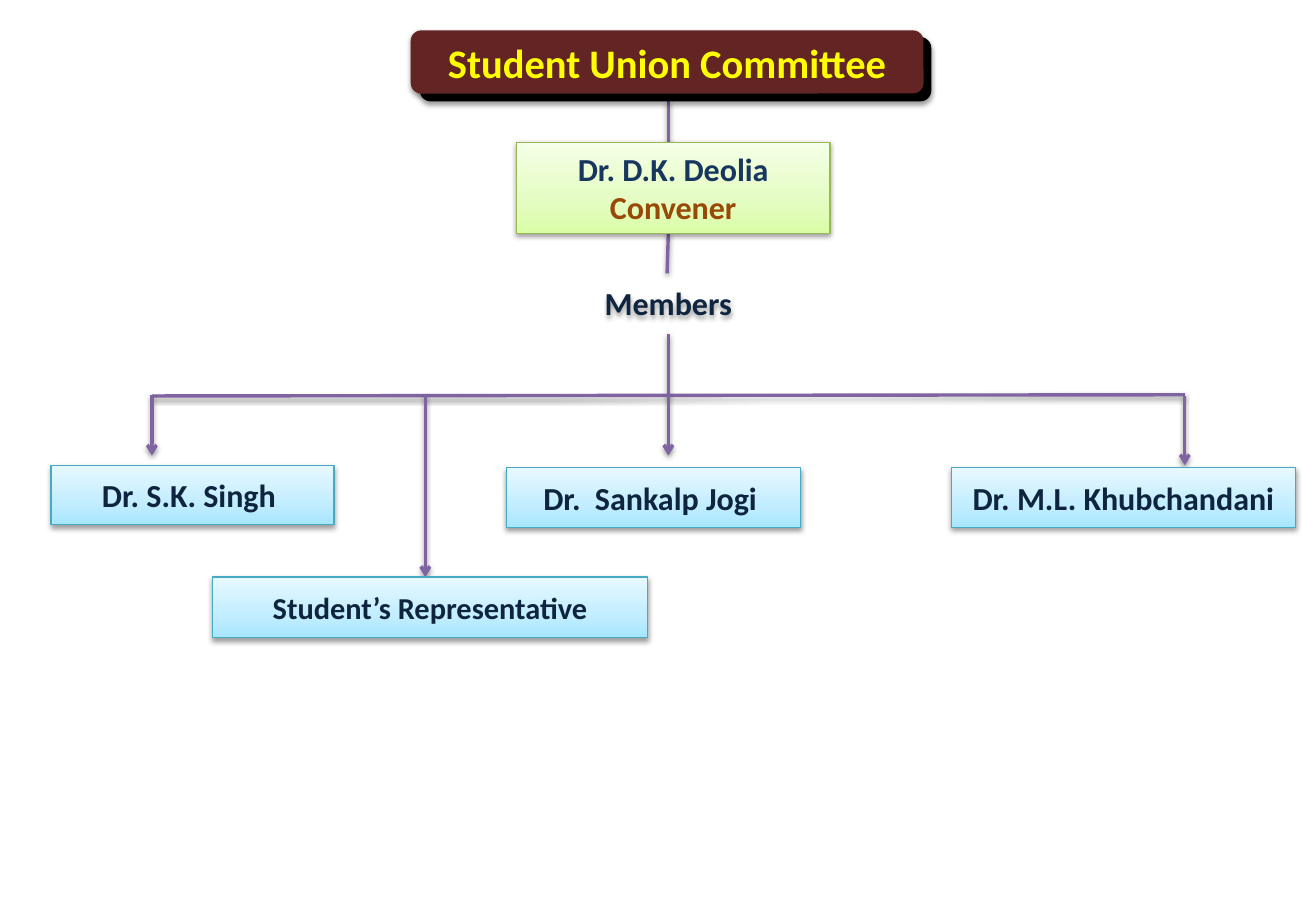
import copy

import lxml.etree
import pptx
import pptx.dml.color
import pptx.enum.shapes
import pptx.enum.text
import pptx.oxml.ns
import pptx.util

Inches, Pt, qn = pptx.util.Inches, pptx.util.Pt, pptx.oxml.ns.qn
SHAPE = pptx.enum.shapes.MSO_SHAPE
PURPLE, NAVY = "8064A2", "0F243E"
BLUE = (["A7E6FF", "C1EDFF", "E7F8FF"], "46AAC5")
GREEN = (["DAFDA7", "E4FCC2", "F5FFE7"], "98B955")
MAROON = (["632523"], None)
BLACK = (["000000"], "000000")
PLAIN = ([], None)


def color(value):
    return pptx.dml.color.RGBColor.from_string(value)


def add_shadow(item):
    effects = lxml.etree.SubElement(item._element.spPr, qn("a:effectLst"))
    shadow = lxml.etree.SubElement(effects, qn("a:outerShdw"), blurRad=str(Pt(3.1)),
                                   dist=str(Pt(1.6)), dir="5400000", rotWithShape="0")
    black = lxml.etree.SubElement(shadow, qn("a:srgbClr"), val="000000")
    lxml.etree.SubElement(black, qn("a:alpha"), val="38000")


deck = pptx.Presentation()
deck.slide_width, deck.slide_height = Inches(10.83), Inches(7.5)
page = deck.slides.add_slide(deck.slide_layouts[6])

# Connecting lines: start, end, arrowhead
links = [
    ((5.5, 0.83), (5.5, 1.17), False),
    ((5.5, 1.92), (5.49, 2.25), False),
    ((5.5, 2.75), (5.5, 3.25), False),
    ((1.25, 3.26), (9.75, 3.25), False),
    ((1.25, 3.25), (1.25, 3.75), True),
    ((3.5, 3.25), (3.5, 4.75), True),
    ((5.5, 3.25), (5.5, 3.75), True),
    ((9.75, 3.26), (9.75, 3.83), True),
]
for start, end, arrow in links:
    link = page.shapes.add_connector(pptx.enum.shapes.MSO_CONNECTOR.STRAIGHT,
                                     *map(Inches, start + end))
    link.line.color.rgb = color(PURPLE)
    link.line.width = Pt(2)
    if arrow:
        lxml.etree.SubElement(link.line._get_or_add_ln(), qn("a:tailEnd"), type="arrow")
    add_shadow(link)

# Boxes: shape, place, style, size, lines of text with their colours
boxes = [
    (SHAPE.ROUNDED_RECTANGLE, (3.46, 0.31, 4.2, 0.52), BLACK, 24, []),
    (SHAPE.ROUNDED_RECTANGLE, (3.38, 0.25, 4.22, 0.52), MAROON, 24,
     [("Student Union Committee", "FFFF00")]),
    (SHAPE.RECTANGLE, (4.25, 1.17, 2.58, 0.75), GREEN, 19,
     [("Dr. D.K. Deolia", "17375E"), ("Convener", "984807")]),
    (None, (4.25, 2.25, 2.5, 0.49), PLAIN, 19, [("Members", NAVY)]),
    (SHAPE.RECTANGLE, (0.42, 3.83, 2.33, 0.49), BLUE, 19, [("Dr. S.K. Singh ", NAVY)]),
    (SHAPE.RECTANGLE, (4.17, 3.85, 2.42, 0.49), BLUE, 19, [("Dr.  Sankalp Jogi ", NAVY)]),
    (SHAPE.RECTANGLE, (7.83, 3.85, 2.83, 0.49), BLUE, 19, [("Dr. M.L. Khubchandani", NAVY)]),
    (SHAPE.RECTANGLE, (1.75, 4.75, 3.58, 0.5), BLUE, 18, [("Student’s Representative", NAVY)]),
]
for kind, place, (fills, outline), size, lines in boxes:
    place = [Inches(length) for length in place]
    if kind is None:
        box = page.shapes.add_textbox(*place)
    else:
        box = page.shapes.add_shape(kind, *place)

    # Fill, outline and shadow
    if len(fills) == 1:
        box.fill.solid()
        box.fill.fore_color.rgb = color(fills[0])
    elif fills:
        box.fill.gradient()
        box.fill.gradient_angle = 90
        stop_list = box._element.spPr.find(".//" + qn("a:gsLst"))
        stop_list.insert(1, copy.deepcopy(stop_list[0]))
        for stop, value, position in zip(box.fill.gradient_stops, fills, (0, 0.35, 1)):
            stop.color.rgb = color(value)
            stop.position = position
    if outline:
        box.line.color.rgb = color(outline)
        box.line.width = Pt(0.75)
    else:
        box.line.fill.background()
    add_shadow(box)

    # Text
    frame = box.text_frame
    frame.word_wrap = True
    frame.vertical_anchor = pptx.enum.text.MSO_ANCHOR.MIDDLE
    frame.margin_left = frame.margin_right = Inches(0.07)
    frame.margin_top = frame.margin_bottom = Inches(0.04)
    frame.text = "\n".join(words for words, _ in lines)
    for para, (_, value) in zip(frame.paragraphs, lines):
        para.alignment = pptx.enum.text.PP_ALIGN.CENTER
        font = para.runs[0].font
        font.name, font.size, font.bold = "Calibri", Pt(size), True
        font.color.rgb = color(value)

deck.save("out.pptx")
